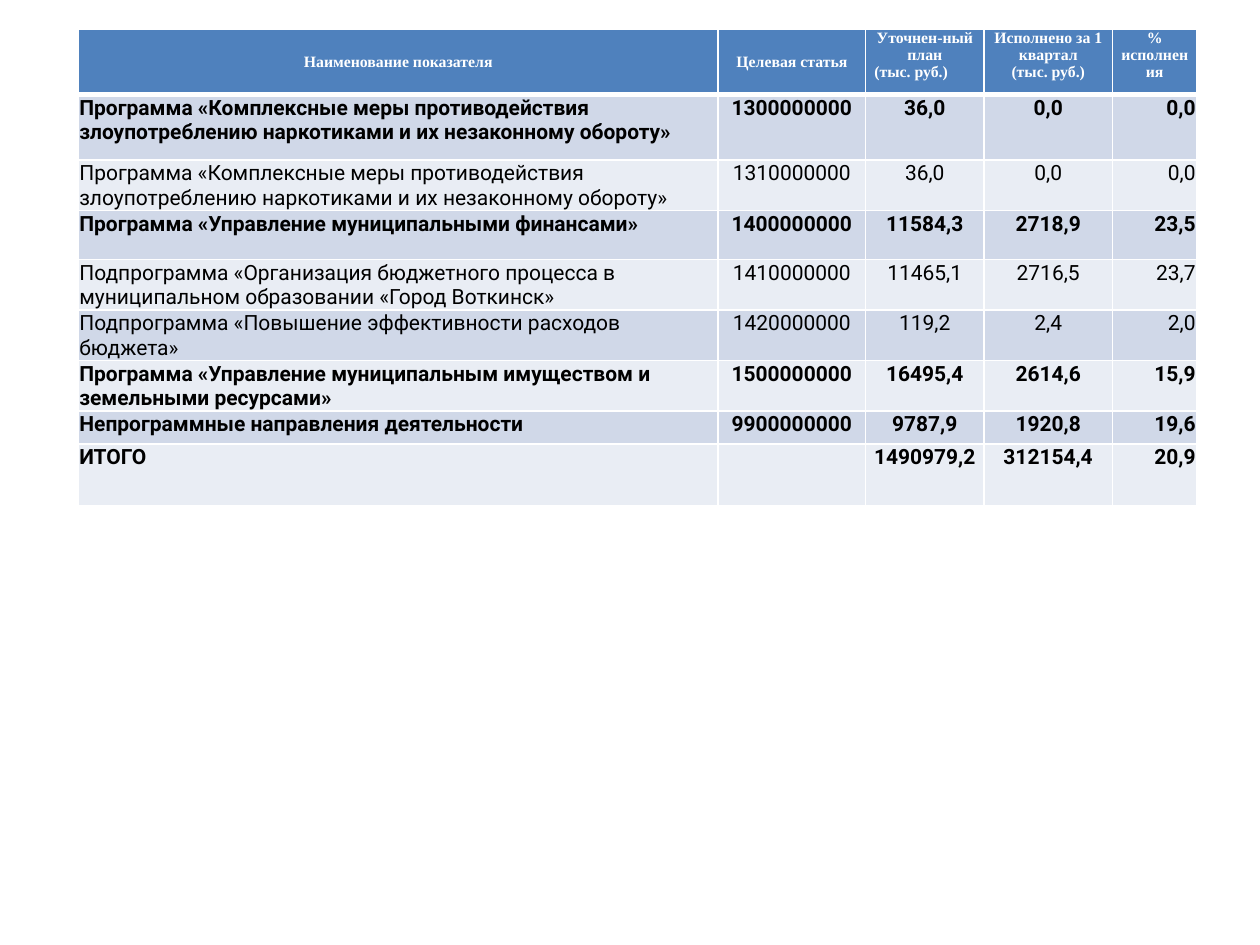
from lxml import etree
from pptx import Presentation
from pptx.dml.color import RGBColor
from pptx.enum.text import MSO_ANCHOR, PP_ALIGN
from pptx.oxml.ns import qn
from pptx.util import Inches, Pt

WHITE = RGBColor(0xFF, 0xFF, 0xFF)
BLACK = RGBColor(0, 0, 0)
HEADER_BLUE = RGBColor(0x4F, 0x81, 0xBD)
BANDS = RGBColor(0xD0, 0xD8, 0xE8), RGBColor(0xE9, 0xED, 0xF4)

COLUMN_WIDTHS = 5.08, 1.17, 0.94, 1.02, 0.67
ROW_HEIGHTS = 0.52, 0.52, 0.36, 0.39, 0.39, 0.32, 0.27, 0.26, 0.49
LEFT, CENTER, RIGHT = PP_ALIGN.LEFT, PP_ALIGN.CENTER, PP_ALIGN.RIGHT
COLUMN_ALIGNS = LEFT, CENTER, CENTER, CENTER, RIGHT

HEADERS = [
    "Наименование показателя",
    "Целевая статья",
    "Уточнен-ный план\n(тыс. руб.)",
    "Исполнено за 1 квартал\n(тыс. руб.)",
    "% исполнения",
]
# Each row: bold, then the text of its cells
ROWS = [
    (True, "Программа «Комплексные меры противодействия злоупотреблению наркотиками "
           "и их незаконному обороту»", "1300000000", "36,0", "0,0", "0,0"),
    (False, "Программа «Комплексные меры противодействия злоупотреблению наркотиками "
            "и их незаконному обороту»", "1310000000", "36,0", "0,0", "0,0"),
    (True, "Программа «Управление муниципальными финансами»",
     "1400000000", "11584,3", "2718,9", "23,5"),
    (False, "Подпрограмма «Организация бюджетного процесса в муниципальном "
            "образовании «Город Воткинск»", "1410000000", "11465,1", "2716,5", "23,7"),
    (False, "Подпрограмма «Повышение эффективности расходов бюджета»",
     "1420000000", "119,2", "2,4", "2,0"),
    (True, "Программа «Управление муниципальным имуществом и земельными ресурсами»",
     "1500000000", "16495,4", "2614,6", "15,9"),
    (True, "Непрограммные направления деятельности",
     "9900000000", "9787,9", "1920,8", "19,6"),
    (True, "ИТОГО", "", "1490979,2", "312154,4", "20,9"),
]


def set_borders(cell, top=1, bottom=1):
    """Draw white cell borders, with widths in points; call before filling."""
    properties = cell._tc.get_or_add_tcPr()
    for side, width in (("L", 1), ("R", 1), ("T", top), ("B", bottom)):
        line = etree.SubElement(properties, qn(f"a:ln{side}"), w=str(Pt(width)))
        fill = etree.SubElement(line, qn("a:solidFill"))
        etree.SubElement(fill, qn("a:srgbClr"), val=str(WHITE))


def set_margins(cell, side, top):
    cell.margin_left = cell.margin_right = Inches(side)
    cell.margin_top, cell.margin_bottom = Inches(top), 0


def fill_cell(cell, words, color):
    cell.text = words
    cell.fill.solid()
    cell.fill.fore_color.rgb = color


def style_paragraphs(cell, align, name, size, color, bold):
    for para in cell.text_frame.paragraphs:
        para.alignment = align
        para.font.name = name
        para.font.size = Pt(size)
        para.font.color.rgb = color
        para.font.bold = bold


def add_header(table):
    for column, words in enumerate(HEADERS):
        cell = table.cell(0, column)
        set_borders(cell, bottom=3)
        set_margins(cell, 0.07, 0)
        fill_cell(cell, words, HEADER_BLUE)
        style_paragraphs(cell, CENTER, "Times New Roman", 9, WHITE, True)
        cell.vertical_anchor = MSO_ANCHOR.MIDDLE if column < 2 else MSO_ANCHOR.TOP
    table.cell(0, 2).text_frame.paragraphs[1].alignment = LEFT


def add_body(table):
    for index, (bold, *values) in enumerate(ROWS):
        for column, (words, align) in enumerate(zip(values, COLUMN_ALIGNS)):
            cell = table.cell(index + 1, column)
            set_borders(cell, top=3 if index == 0 else 1)
            set_margins(cell, 0.01, 0.01)
            fill_cell(cell, words, BANDS[index % 2])
            style_paragraphs(cell, align, "Roboto", 12, BLACK, bold)


def add_budget_table(page, left, top, width, height):
    frame = page.shapes.add_table(len(ROW_HEIGHTS), len(COLUMN_WIDTHS),
                                  left, top, width, height)
    table = frame.table
    for column, size in zip(table.columns, COLUMN_WIDTHS):
        column.width = Inches(size)
    for row, size in zip(table.rows, ROW_HEIGHTS):
        row.height = Inches(size)
    add_header(table)
    add_body(table)


def main():
    deck = Presentation()
    deck.slide_width, deck.slide_height = Inches(10), Inches(7.5)
    page = deck.slides.add_slide(deck.slide_layouts[6])
    add_budget_table(page, Inches(0.62), Inches(0.23), Inches(8.88), Inches(3.74))
    deck.save("out.pptx")


if __name__ == "__main__":
    main()
